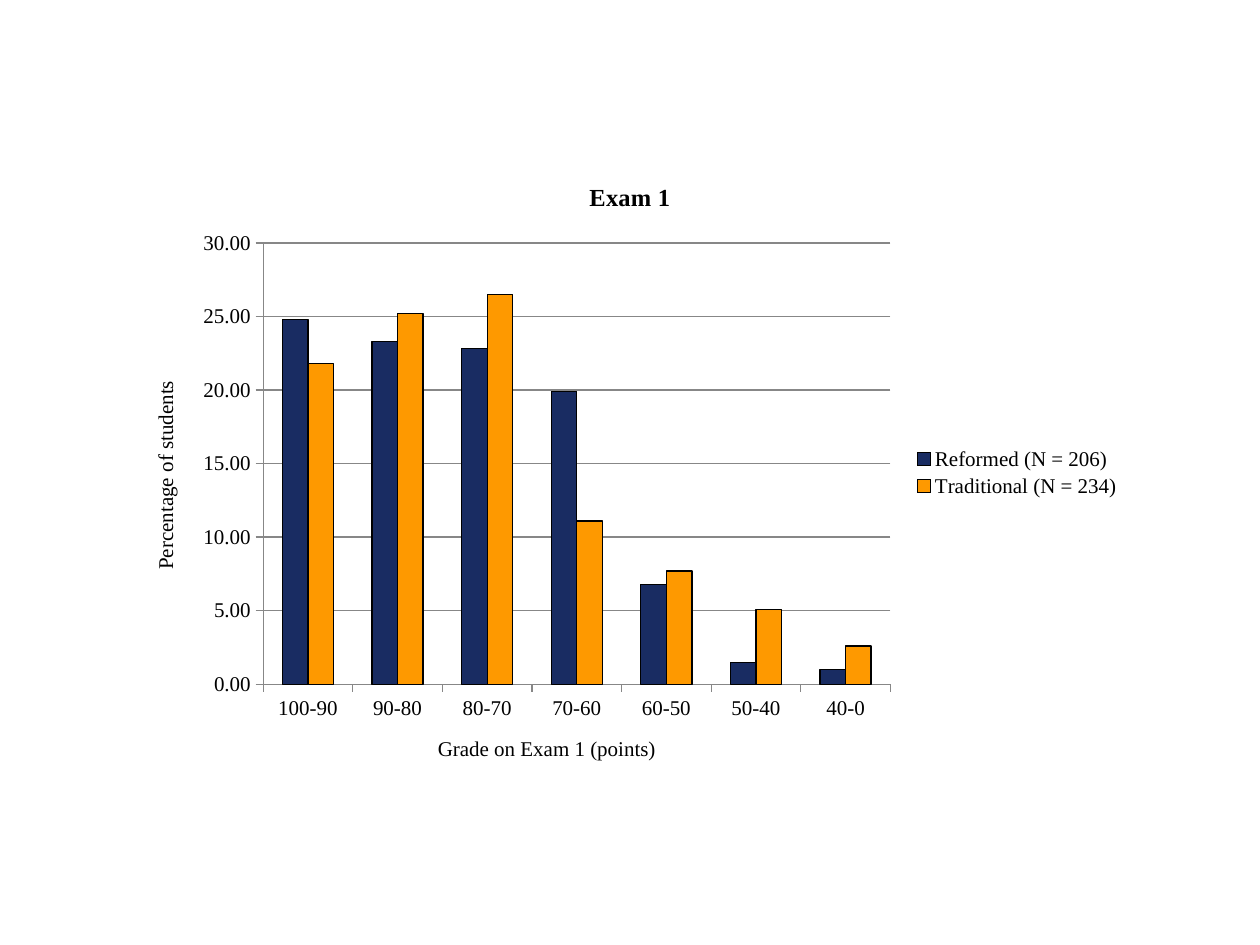
"""Build a slide with a clustered column chart comparing Exam 1 grades of two groups."""
from dataclasses import dataclass
from typing import Any

from pptx import Presentation
from pptx.chart.data import CategoryChartData
from pptx.dml.color import RGBColor
from pptx.enum.chart import XL_CHART_TYPE, XL_LEGEND_POSITION, XL_TICK_MARK
from pptx.util import Inches, Pt

COLUMNS = XL_CHART_TYPE.COLUMN_CLUSTERED
LEGEND_RIGHT = XL_LEGEND_POSITION.RIGHT
TICK_OUTSIDE = XL_TICK_MARK.OUTSIDE
TICK_NONE = XL_TICK_MARK.NONE
BLANK_LAYOUT = 6

COLORS = {"text": "000000", "outline": "000000", "axis": "878787",
          "reformed": "192C62", "traditional": "FE9900"}
FONT = {"name": "Times New Roman", "size": Pt(12), "bold": False}
TITLE_FONT = {**FONT, "size": Pt(14), "bold": True}
GRADES = ("100-90", "90-80", "80-70", "70-60", "60-50", "50-40", "40-0")


@dataclass(frozen=True)
class Group:
    """One group of students and its share in each grade band."""
    name: str
    color: str
    percentages: tuple[float, ...]


GROUPS = (
    Group("Reformed (N = 206)", "reformed", (24.8, 23.3, 22.8, 19.9, 6.8, 1.5, 1)),
    Group("Traditional (N = 234)", "traditional", (21.8, 25.2, 26.5, 11.1, 7.7, 5.1, 2.6)),
)


def color(name: str) -> RGBColor:
    """Look up a named colour."""
    return RGBColor.from_string(COLORS[name])


def set_values(target: Any, values: dict[str, Any]) -> None:
    """Set each named attribute on the target."""
    for name, value in values.items():
        setattr(target, name, value)


def format_font(font: Any, values: dict[str, Any]) -> None:
    """Apply font values and the text colour."""
    set_values(font, values)
    font.color.rgb = color("text")


def format_line(line: Any, name: str) -> None:
    """Draw a thin line in a named colour."""
    line.color.rgb = color(name)
    line.width = Pt(0.75)


def add_title(owner: Any, text: str, values: dict[str, Any]) -> None:
    """Give a chart or an axis its title."""
    frame = (owner.chart_title if hasattr(owner, "chart_title") else owner.axis_title).text_frame
    frame.text = text
    format_font(frame.paragraphs[0].runs[0].font, values)


def format_axis(axis: Any, title: str, values: dict[str, Any]) -> None:
    """Format an axis with its title, ticks and labels."""
    set_values(axis, {"major_tick_mark": TICK_OUTSIDE, "minor_tick_mark": TICK_NONE, **values})
    format_line(axis.format.line, "axis")
    format_font(axis.tick_labels.font, FONT)
    add_title(axis, title, FONT)


def add_grade_chart(slide: Any, width: int, height: int) -> None:
    """Add the grade chart, centred at shares of the slide's size."""
    data = CategoryChartData(number_format="0.00")
    data.categories = GRADES
    for group in GROUPS:
        data.add_series(group.name, group.percentages)
    chart = slide.shapes.add_chart(COLUMNS, width // 10, height // 6,
                                   width * 4 // 5, height * 2 // 3, data).chart
    format_font(chart.font, FONT)
    add_title(chart, "Exam 1", TITLE_FONT)
    format_axis(chart.category_axis, "Grade on Exam 1 (points)", {"has_major_gridlines": False})
    value_axis = chart.value_axis
    format_axis(value_axis, "Percentage of students",
                {"has_major_gridlines": True, "minimum_scale": 0,
                 "maximum_scale": 30, "major_unit": 5})
    format_line(value_axis.major_gridlines.format.line, "axis")
    set_values(value_axis.tick_labels, {"number_format": "0.00", "number_format_is_linked": False})
    chart.has_legend = True
    set_values(chart.legend, {"position": LEGEND_RIGHT, "include_in_layout": False})
    format_font(chart.legend.font, FONT)
    plot = chart.plots[0]
    set_values(plot, {"gap_width": 150, "overlap": 0, "vary_by_categories": False})
    for series, group in zip(plot.series, GROUPS):
        series.invert_if_negative = False
        series.format.fill.solid()
        series.format.fill.fore_color.rgb = color(group.color)
        format_line(series.format.line, "outline")


def main() -> None:
    """Build and save the presentation."""
    presentation = Presentation()
    set_values(presentation, {"slide_width": Inches(10), "slide_height": Inches(7.5)})
    slide = presentation.slides.add_slide(presentation.slide_layouts[BLANK_LAYOUT])
    add_grade_chart(slide, presentation.slide_width, presentation.slide_height)
    presentation.save("out.pptx")


if __name__ == "__main__":
    main()
